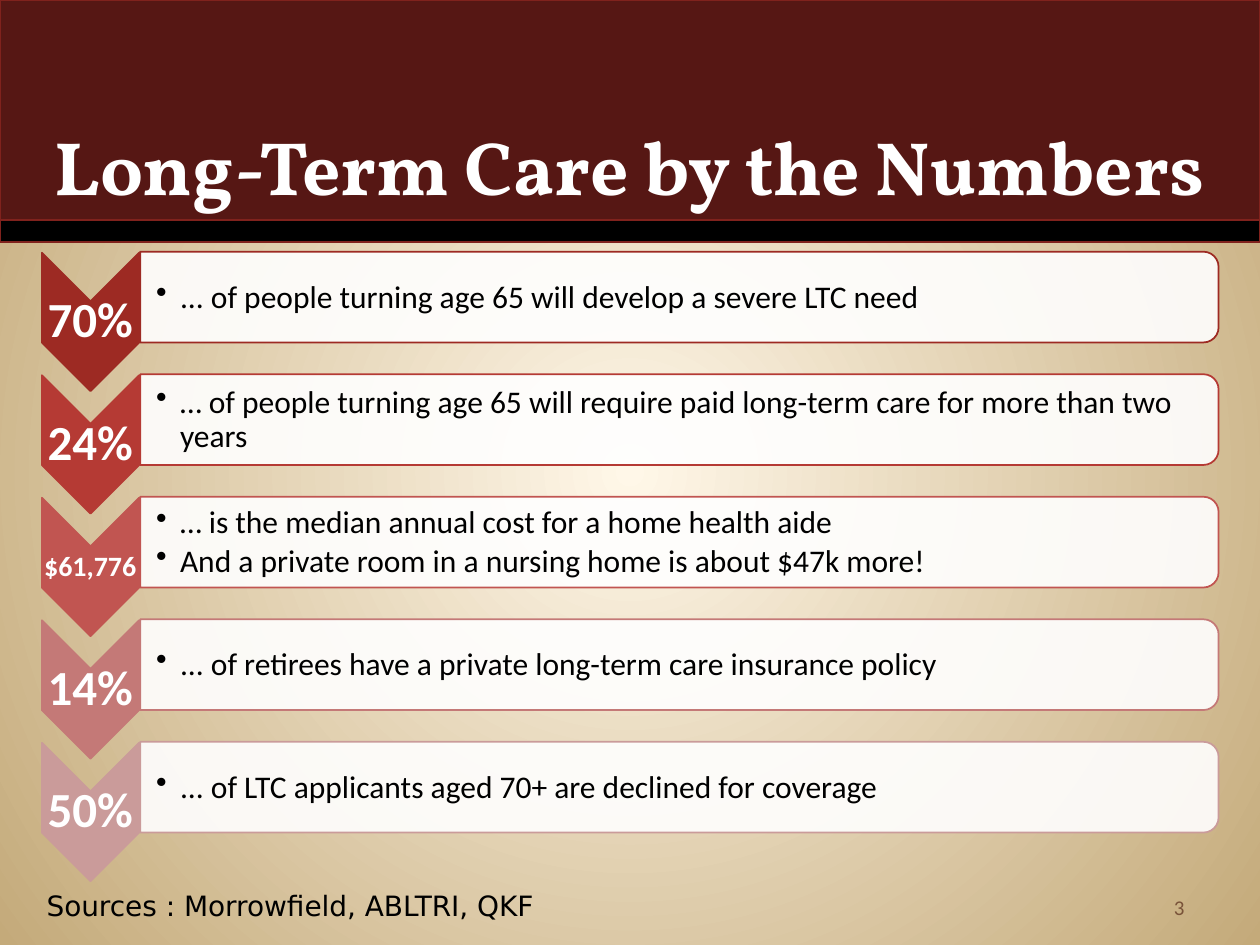
from lxml.etree import SubElement
from pptx import Presentation
from pptx.dml.color import RGBColor
from pptx.enum.shapes import MSO_SHAPE as SHAPE
from pptx.enum.text import MSO_ANCHOR as ANCHOR, PP_ALIGN as ALIGN
from pptx.oxml.ns import qn
from pptx.util import Cm, Pt

WHITE = RGBColor(0xFF, 0xFF, 0xFF)
BLACK = RGBColor(0x00, 0x00, 0x00)
CREAM = RGBColor(0xFF, 0xF7, 0xE8)
SAND = RGBColor(0xC4, 0xAA, 0x7A)
MAROON = RGBColor(0x56, 0x17, 0x14)
BRICK = RGBColor(0x80, 0x22, 0x1D)
BROWN = RGBColor(0x79, 0x53, 0x39)

ROWS = [
    ("70%", 28, RGBColor(0x9D, 0x2A, 0x23),
     ["... of people turning age 65 will develop a severe LTC need"]),
    ("24%", 28, RGBColor(0xB5, 0x3A, 0x34),
     ["… of people turning age 65 will require paid long-term care for more than two years"]),
    ("$61,776", 16, RGBColor(0xC1, 0x55, 0x51),
     ["… is the median annual cost for a home health aide",
      "And a private room in a nursing home is about $47k more!"]),
    ("14%", 28, RGBColor(0xC4, 0x79, 0x77),
     ["... of retirees have a private long-term care insurance policy"]),
    ("50%", 28, RGBColor(0xCA, 0x9B, 0x9A),
     ["... of LTC applicants aged 70+ are declined for coverage"]),
]
ROW_PITCH = 2.47


class Deck:
    body_font = "Calibri"
    title_font = "Vollkorn"
    source_font = "DejaVu Sans"

    def __init__(self):
        self.prs = Presentation()
        self.prs.slide_width, self.prs.slide_height = Cm(25.4), Cm(19.05)
        self.s = self.prs.slides.add_slide(self.prs.slide_layouts[6])

    def background(self, center, edge):
        fill = self.s.background.fill
        fill.gradient()
        for stop, color, position in zip(fill.gradient_stops, (center, edge), (0, 1)):
            stop.color.rgb = color
            stop.position = position
        grad = self.s.background._cSld.find(".//" + qn("a:gradFill"))
        grad.remove(grad.find(qn("a:lin")))
        radial = SubElement(grad, qn("a:path"), path="circle")
        SubElement(radial, qn("a:fillToRect"), l="50000", t="50000", r="50000", b="50000")

    def shape(self, kind, box, fill, line, rotation=0, opacity=100):
        sp = self.s.shapes.add_shape(kind, *map(Cm, box))
        sp.shadow.inherit = False
        sp.rotation = rotation
        sp.fill.solid()
        sp.fill.fore_color.rgb = fill
        sp.line.color.rgb = line
        sp.line.width = Pt(1)
        if opacity < 100:
            color = sp._element.spPr.find(qn("a:solidFill"))[0]
            SubElement(color, qn("a:alpha"), val=str(opacity * 1000))

    def text(self, box, lines, size, color, font=body_font, bold=False, align=ALIGN.LEFT,
             anchor=ANCHOR.TOP, wrap=True, insets=(0.25, 0.13, 0.25, 0.13), spacing=1):
        tf = self.s.shapes.add_textbox(*map(Cm, box)).text_frame
        tf.word_wrap = wrap
        tf.vertical_anchor = anchor
        tf.margin_left, tf.margin_top, tf.margin_right, tf.margin_bottom = map(Cm, insets)
        tf.text = "\n".join(lines)
        for p in tf.paragraphs:
            p.alignment = align
            p.line_spacing = spacing
            for r in p.runs:
                r.font.name, r.font.size, r.font.bold = font, Pt(size), bold
                r.font.color.rgb = color
        return tf

    def bullets(self, box, lines):
        tf = self.text(box, lines, 18, BLACK, anchor=ANCHOR.MIDDLE,
                       insets=(0.36, 0.03, 0.03, 0.03), spacing=0.9)
        for p in tf.paragraphs:
            p.level = 1
            p.space_after = Pt(2.7)
            pPr = p._p.get_or_add_pPr()
            pPr.set("marL", str(Cm(0.48)))
            pPr.set("indent", str(Cm(-0.48)))
            SubElement(pPr, qn("a:buChar"), char="•")

    def row(self, offset, label, size, color, lines):
        self.shape(SHAPE.CHEVRON, (0.43, 5.51 + offset, 2.79, 1.96), color, color, 90)
        self.text((0.84, 6.07 + offset, 1.96, 0.84), [label], size, WHITE, bold=True,
                  align=ALIGN.CENTER, anchor=ANCHOR.MIDDLE, insets=(0.03,) * 4, spacing=0.9)
        self.shape(SHAPE.ROUND_2_SAME_RECTANGLE, (12.78, -4.88 + offset, 1.83, 21.74),
                   WHITE, color, 90, opacity=90)
        self.bullets((2.79, 5.18 + offset, 21.67, 1.65), lines)


def main():
    deck = Deck()
    deck.background(CREAM, SAND)
    deck.shape(SHAPE.RECTANGLE, (0, 4.24, 25.4, 0.64), BLACK, BRICK)
    deck.shape(SHAPE.RECTANGLE, (0, 0, 25.4, 4.44), MAROON, BRICK)
    deck.text((18.21, 17.35, 5.92, 1.32), ["3"], 12, BROWN,
              align=ALIGN.RIGHT, anchor=ANCHOR.BOTTOM)
    deck.text((0.84, 0.36, 23.7, 4.01), ["Long-Term Care by the Numbers"], 43.2, WHITE,
              deck.title_font, bold=True, align=ALIGN.CENTER, anchor=ANCHOR.BOTTOM, wrap=False)
    for i, row in enumerate(ROWS):
        deck.row(i * ROW_PITCH, *row)
    deck.text((0.69, 17.78, 10.95, 0.94), ["Sources : Morrowfield, ABLTRI, QKF"], 16, BLACK,
              deck.source_font, wrap=False)
    deck.prs.save("out.pptx")


if __name__ == "__main__":
    main()
